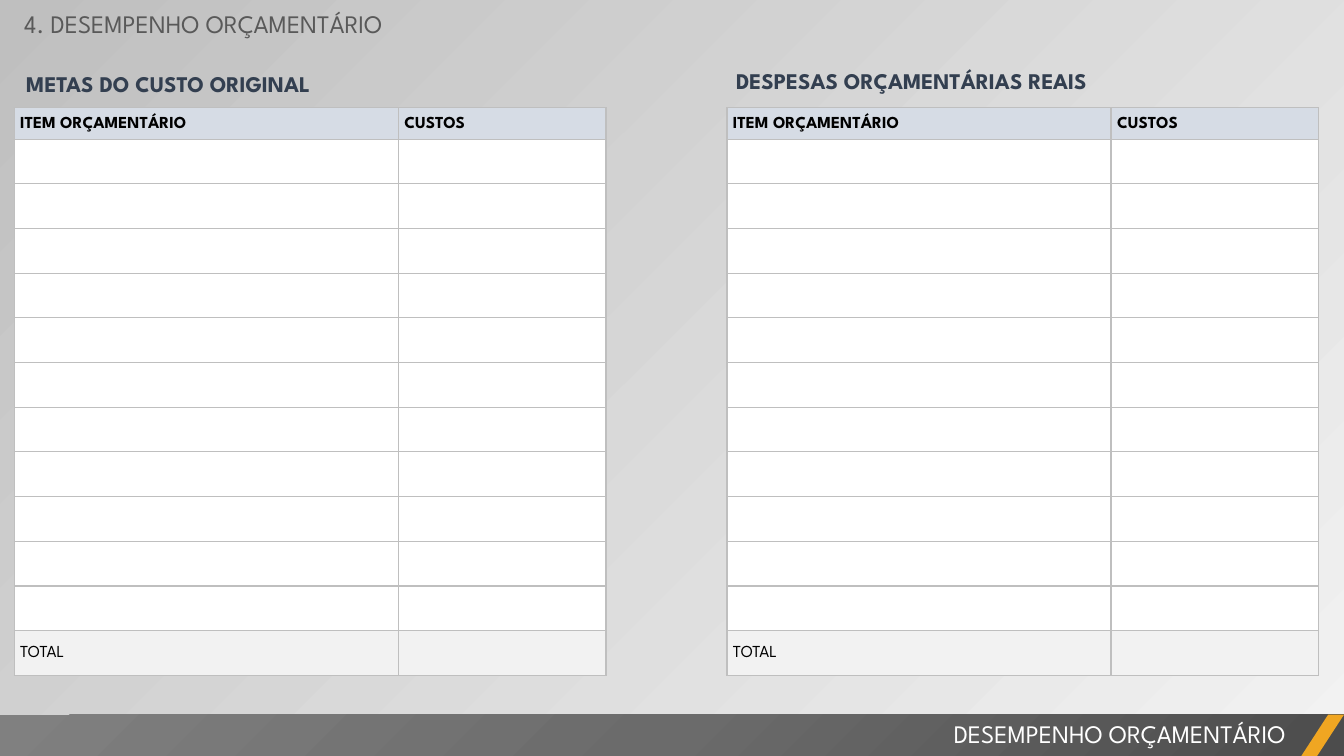
from lxml import etree
from pptx import Presentation
from pptx.dml.color import RGBColor
from pptx.enum import shapes as sh, text as tx
from pptx.oxml import parse_xml
from pptx.oxml.ns import nsdecls, qn
from pptx.util import Inches, Pt

FONT = "League Spartan"
NAVY = RGBColor(0x33, 0x3F, 0x50)
BLACK = RGBColor(0, 0, 0)
WHITE = RGBColor(0xFF, 0xFF, 0xFF)
GRAY = RGBColor(0x59, 0x59, 0x59)
RULE = RGBColor(0xBF, 0xBF, 0xBF)
PALE = RGBColor(0xF2, 0xF2, 0xF2)
BLUE = RGBColor(0xD6, 0xDC, 0xE5)
GOLD = RGBColor(0xF0, 0xA6, 0x22)
DARK = RGBColor(0x4C, 0x4C, 0x4C)
MID = RGBColor(0x6B, 0x6B, 0x6B)
LIGHT = RGBColor(0x80, 0x80, 0x80)

LEFT = tx.PP_ALIGN.LEFT
RIGHT = tx.PP_ALIGN.RIGHT
HEAD = ("ITEM ORÇAMENTÁRIO", "CUSTOS")
COLS = (3.81, 2.06)
ROWS = 13
TOP = 1.07
HIGH = 5.63
HEAD_H = 0.31


def style(par, size, color, bold=False):
    for run in par.runs:
        font = run.font
        font.name, font.size, font.bold = FONT, Pt(size), bold
        font.color.rgb = color


def write(box, words, size, color, bold=False, align=LEFT):
    frame = box.text_frame
    frame.text = words
    frame.word_wrap = True
    frame.auto_size = tx.MSO_AUTO_SIZE.SHAPE_TO_FIT_TEXT
    frame.vertical_anchor = tx.MSO_ANCHOR.TOP
    par = frame.paragraphs[0]
    par.alignment = align
    style(par, size, color, bold)
    return frame


def label(slide, x, y, wide, words, size, color, bold=False, align=LEFT):
    box = slide.shapes.add_textbox(Inches(x), Inches(y), Inches(wide), Inches(0.4))
    return write(box, words, size, color, bold, align)


def heading(slide, x, y, words):
    frame = label(slide, x, y, 5.58, words, 16, NAVY, True)
    frame.margin_left = frame.margin_right = Inches(0.12)
    frame.margin_top = frame.margin_bottom = Inches(0.06)
    par = frame.paragraphs[0]
    par.line_spacing = Pt(21.5)
    par.space_before = Pt(3.2)


def border(cell):
    props = cell._tc.get_or_add_tcPr()
    for side in ("lnL", "lnR", "lnT", "lnB"):
        props.append(parse_xml(
            f'<a:{side} {nsdecls("a")} w="{Pt(1)}"><a:solidFill>'
            f'<a:srgbClr val="{RULE}"/></a:solidFill></a:{side}>'))


def fill_cell(cell, words, color, bold):
    border(cell)
    cell.fill.solid()
    cell.fill.fore_color.rgb = color
    cell.vertical_anchor = tx.MSO_ANCHOR.MIDDLE
    cell.margin_left = cell.margin_right = Inches(0.06)
    cell.margin_top = cell.margin_bottom = 0
    if words:
        cell.text_frame.text = words
        par = cell.text_frame.paragraphs[0]
        par.line_spacing = 1.07
        style(par, 12, BLACK, bold)


def budget(slide, x):
    frame = slide.shapes.add_table(
        ROWS, len(COLS), Inches(x), Inches(TOP), Inches(sum(COLS)), Inches(HIGH))
    table = frame.table
    for col, wide in zip(table.columns, COLS):
        col.width = Inches(wide)
    last = ROWS - 1
    for i, row in enumerate(table.rows):
        row.height = Inches(HEAD_H if i == 0 else (HIGH - HEAD_H) / last)
        words, color = ("", ""), WHITE
        if i == 0:
            words, color = HEAD, BLUE
        elif i == last:
            words, color = ("TOTAL", ""), PALE
        for cell, word in zip(row.cells, words):
            fill_cell(cell, word, color, i == 0)


def block(slide, kind, x, wide):
    shape = slide.shapes.add_shape(
        kind, Inches(x), Inches(7.09), Inches(wide), Inches(0.42))
    shape.shadow.inherit = False
    shape.line.fill.background()
    return shape


def radial(shape, colors):
    shape.fill.gradient()
    grad = shape._element.spPr.find(qn("a:gradFill"))
    for child in list(grad):
        grad.remove(child)
    stops = etree.SubElement(grad, qn("a:gsLst"))
    for i, color in enumerate(colors):
        stop = etree.SubElement(
            stops, qn("a:gs"), pos=str(100000 * i // (len(colors) - 1)))
        etree.SubElement(stop, qn("a:srgbClr"), val=str(color))
    ring = etree.SubElement(grad, qn("a:path"), {"path": "circle"})
    etree.SubElement(ring, qn("a:fillToRect"), l="100000", t="100000")


def backdrop(slide):
    fill = slide.background.fill
    fill.gradient()
    fill.gradient_angle = 135
    for stop, color in zip(fill.gradient_stops, (PALE, RULE)):
        stop.color.rgb = color


def heading_title(slide, words):
    title = slide.shapes.title
    title.left, title.top = Inches(0.14), Inches(0.03)
    title.width, title.height = Inches(5.31), Inches(0.4)
    write(title, words, 18, GRAY)


def footer(slide):
    bar = block(slide, sh.MSO_SHAPE.RECTANGLE, 0, 13.33)
    radial(bar, (DARK, MID, LIGHT))
    label(slide, 5.25, 7.08, 7.6, "DESEMPENHO ORÇAMENTÁRIO", 18, WHITE, align=RIGHT)
    slash = block(slide, sh.MSO_SHAPE.PARALLELOGRAM, 12.9, 0.43)
    slash.adjustments[0] = 0.65
    slash.fill.solid()
    slash.fill.fore_color.rgb = GOLD


def main():
    prs = Presentation()
    prs.slide_width, prs.slide_height = Inches(13.33), Inches(7.5)
    slide = prs.slides.add_slide(prs.slide_layouts[5])
    backdrop(slide)
    heading_title(slide, "4. DESEMPENHO ORÇAMENTÁRIO")
    heading(slide, 0.14, 0.6, "METAS DO CUSTO ORIGINAL")
    heading(slide, 7.18, 0.57, "DESPESAS ORÇAMENTÁRIAS REAIS")
    for x in (0.14, 7.21):
        budget(slide, x)
    footer(slide)
    prs.save("out.pptx")


if __name__ == "__main__":
    main()
